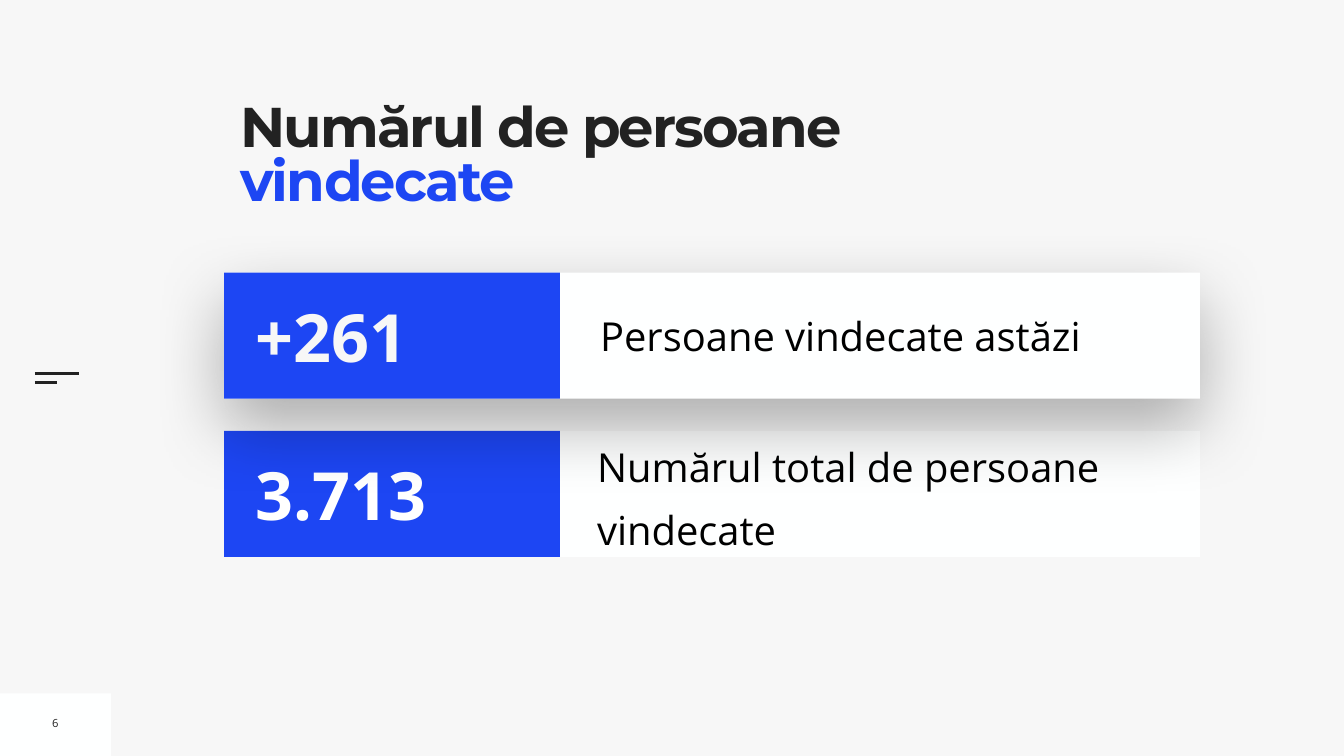
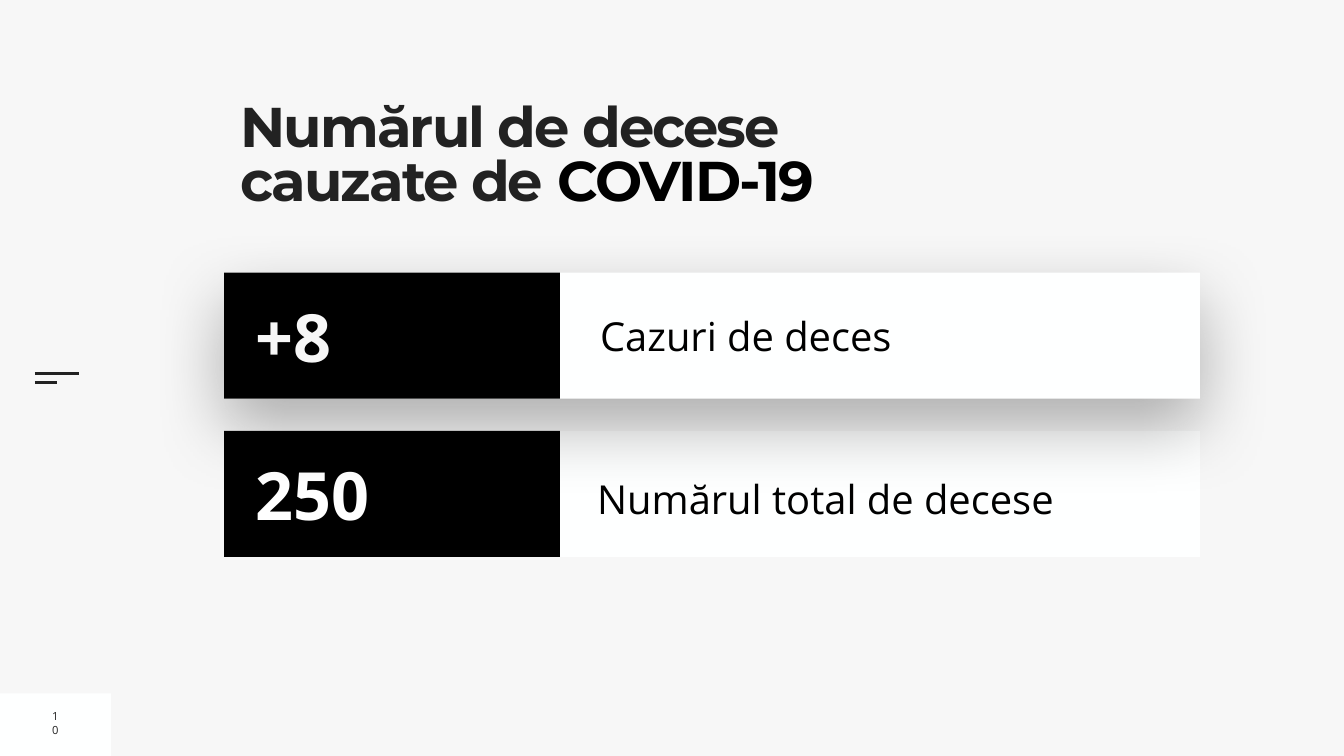
from lxml import etree
from pptx import Presentation
from pptx.dml.color import RGBColor
from pptx.enum.shapes import MSO_CONNECTOR, MSO_SHAPE
from pptx.enum.text import MSO_ANCHOR as Anchor, PP_ALIGN as Align
from pptx.oxml.ns import qn
from pptx.util import Inches, Pt

COLORS = {
    "paper": "F7F7F7",
    "card": "FEFFFF",
    "ink": "222222",
    "recovered": "1D46F3",
    "deaths": "000000",
    "black": "000000",
    "white": "FFFFFF",
}
TITLE_FONT, BODY_FONT = "Montserrat", "Open Sans"
ROW_LEFT, ROW_WIDTH, ROW_HEIGHT = 4.45, 19.36, 2.5
TODAY_TOP, TOTAL_TOP = 5.41, 8.55

SLIDES = [
    {
        "page": "6",
        "title": ("Numărul de persoane ", "vindecate"),
        "accent": "recovered",
        "today": ("+261", "Persoane vindecate astăzi"),
        "total": ("3.713", "Numărul total de persoane vindecate"),
    },
    {
        "page": "10",
        "title": ("Numărul de decese cauzate de ", "COVID-19"),
        "accent": "deaths",
        "today": ("+8", "Cazuri de deces"),
        "total": ("250", "Numărul total de decese"),
    },
]


def rgb(name):
    return RGBColor.from_string(COLORS[name])


def add_run(paragraph, text, size, color, font=BODY_FONT, bold=False):
    run = paragraph.add_run()
    run.text = text
    run.font.name = font
    run.font.size = Pt(size)
    run.font.bold = bold
    run.font.color.rgb = rgb(color)
    return run


def set_frame(frame, inset, anchor):
    frame.word_wrap = True
    frame.vertical_anchor = anchor
    frame.margin_left = frame.margin_right = Inches(inset)
    frame.margin_top = frame.margin_bottom = Inches(inset)


def add_text(shapes, box, text, size, color, bold=False, inset=0.1):
    """Add a vertically centred text box and return its paragraph."""
    frame = shapes.add_textbox(*map(Inches, box)).text_frame
    set_frame(frame, inset, Anchor.MIDDLE)
    paragraph = frame.paragraphs[0]
    add_run(paragraph, text, size, color, bold=bold)
    return paragraph


def add_band(shapes, box, color):
    band = shapes.add_shape(MSO_SHAPE.RECTANGLE, *map(Inches, box))
    band.shadow.inherit = False
    band.fill.solid()
    band.fill.fore_color.rgb = rgb(color)
    band.line.fill.background()
    return band


def add_soft_shadow(band):
    effects = band._element.spPr.find(qn("a:effectLst"))
    shadow = etree.SubElement(effects, qn("a:outerShdw"), blurRad=str(Pt(100)),
                              dist=str(Pt(40)), dir="5400000", rotWithShape="0")
    tint = etree.SubElement(shadow, qn("a:srgbClr"), val=COLORS["black"])
    etree.SubElement(tint, qn("a:alpha"), val="30000")


def add_rule(shapes, left, top, length):
    rule = shapes.add_connector(MSO_CONNECTOR.STRAIGHT, Inches(left), Inches(top),
                                Inches(left + length), Inches(top))
    rule.line.color.rgb = rgb("ink")
    rule.line.width = Pt(3)
    etree.SubElement(rule._element.spPr, qn("a:effectLst"))


def add_side_marks(slide, page):
    """Add the page number tab and the two short rules on the left edge."""
    add_band(slide.shapes, (0, 13.76, 2.2, 1.24), "card")
    add_rule(slide.shapes, 0.69, 7.41, 0.88)
    add_rule(slide.shapes, 0.69, 7.59, 0.44)
    number = add_text(slide.shapes, (0.93, 14.09, 0.34, 0.51), page, 16, "ink")
    number.alignment = Align.CENTER


def set_title(slide, lead, highlight, accent):
    title = slide.shapes.title
    title.left, title.top = Inches(4.77), Inches(2.07)
    title.width, title.height = Inches(13.01), Inches(2.73)
    set_frame(title.text_frame, 0, Anchor.TOP)
    paragraph = title.text_frame.paragraphs[0]
    paragraph.alignment = Align.LEFT
    paragraph.line_spacing = 0.8
    for text, color in ((lead, "ink"), (highlight, accent)):
        run = add_run(paragraph, text, 80, color, TITLE_FONT, bold=True)
        run.font._element.set("spc", "-270")


def add_figure_row(slide, top, figure, figure_color, accent):
    """Add a card with its figure on a coloured block; return the row's shapes."""
    row = slide.shapes.add_group_shape().shapes
    card = add_band(row, (ROW_LEFT, top, ROW_WIDTH, ROW_HEIGHT), "card")
    add_band(row, (ROW_LEFT, top, 6.66, ROW_HEIGHT), accent)
    add_text(row, (ROW_LEFT + 0.53, top + 0.35, 6.03, 1.8), figure, 95,
             figure_color, bold=True)
    return row, card


def add_total_row(slide, figure, label, accent):
    row, _ = add_figure_row(slide, TOTAL_TOP, figure, "white", accent)
    caption = add_text(row, (ROW_LEFT + 7.4, TOTAL_TOP + 0.01, 11.95, 2.36),
                       label, 57, "black", inset=0)
    caption.line_spacing = 1.3
    caption.space_before = Pt(20)


def add_today_row(slide, figure, label, accent):
    row, card = add_figure_row(slide, TODAY_TOP, figure, "paper", accent)
    add_soft_shadow(card)
    add_text(row, (ROW_LEFT + 7.36, TODAY_TOP + 0.66, 11.76, 1.16), label, 57, "black")


def build_figures_slide(deck, content):
    slide = deck.slides.add_slide(deck.slide_layouts[5])
    accent = content["accent"]
    add_side_marks(slide, content["page"])
    set_title(slide, *content["title"], accent)
    add_total_row(slide, *content["total"], accent)
    add_today_row(slide, *content["today"], accent)


def main():
    deck = Presentation()
    deck.slide_width, deck.slide_height = Inches(26.67), Inches(15)
    backdrop = deck.slide_master.background.fill
    backdrop.solid()
    backdrop.fore_color.rgb = rgb("paper")
    for content in SLIDES:
        build_figures_slide(deck, content)
    deck.save("out.pptx")


if __name__ == "__main__":
    main()
